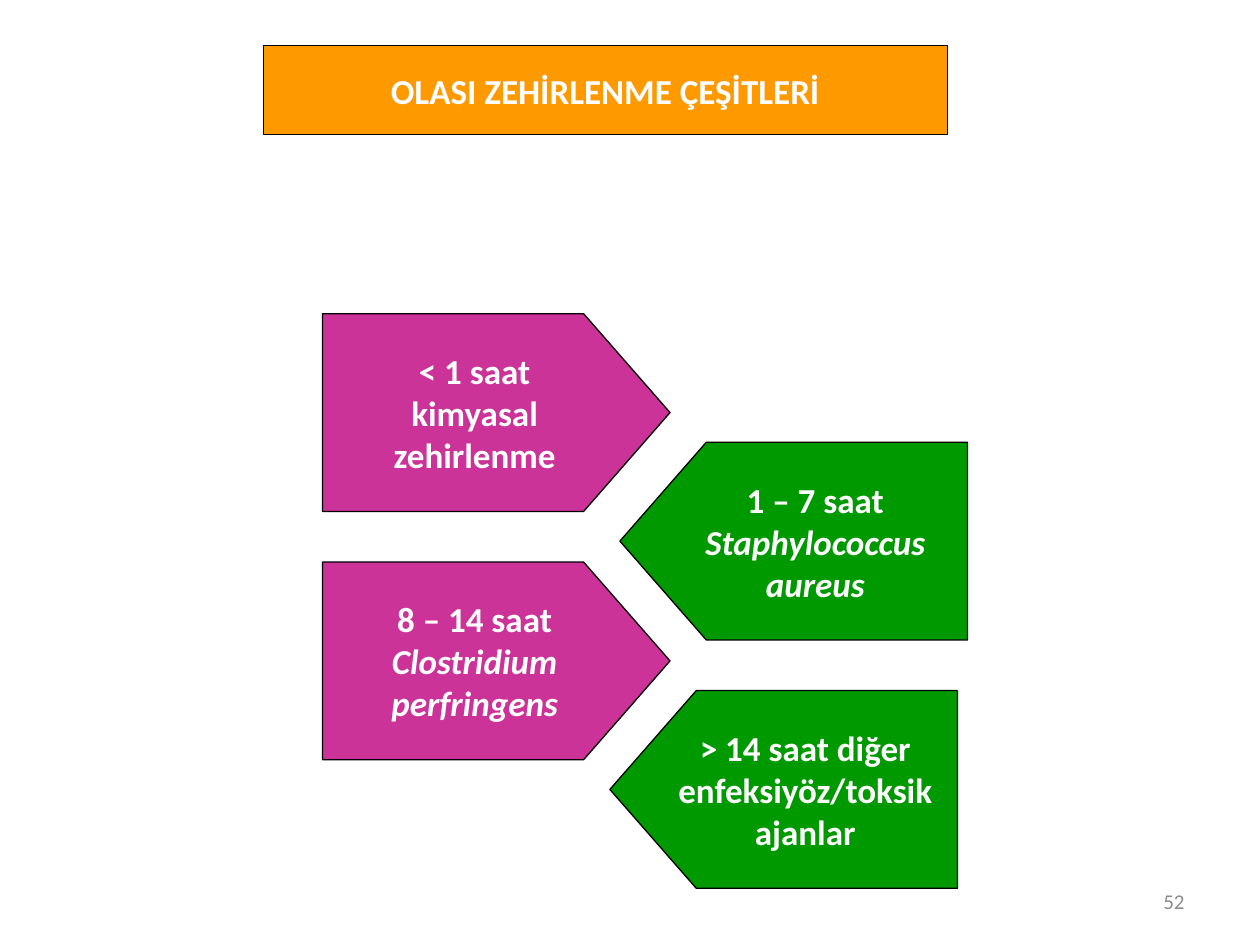
from dataclasses import dataclass

from pptx import Presentation
from pptx.dml.color import RGBColor as Rgb
from pptx.enum import shapes, text
from pptx.util import Pt


@dataclass(frozen=True)
class Theme:
    """Colours and type sizes of the slide."""
    font: str = "Calibri"
    size: int = 20
    small: int = 12
    white: str = "FFFFFF"
    black: str = "000000"
    gray: str = "8C8C8C"
    orange: str = "FF9900"
    pink: str = "CC3399"
    green: str = "009900"


THEME = Theme()
CENTER = text.PP_ALIGN.CENTER
LEFT = [
    [[("< 1 saat", False)], [("kimyasal zehirlenme", False)]],
    [[("8 – 14 saat ", False), ("Clostridium perfringens", True)]],
]
RIGHT = [
    [[("1 – 7 saat ", False), ("Staphylococcus aureus", True)]],
    [[("> 14 saat diğer enfeksiyöz/toksik ajanlar", False)]],
]


def place(shape, box):
    """Move and size a shape to a box in points."""
    shape.left, shape.top, shape.width, shape.height = map(Pt, box)


def paint(shape, color):
    """Fill a shape and give it a thin black outline."""
    shape.fill.solid()
    shape.fill.fore_color.rgb = Rgb.from_string(color)
    shape.line.color.rgb = Rgb.from_string(THEME.black)
    shape.line.width = Pt(0.75)


def write(frame, paras, size, color, bold, align):
    """Write paragraphs of (words, italic) runs into a text frame."""
    frame.vertical_anchor = text.MSO_ANCHOR.MIDDLE
    for i, runs in enumerate(paras):
        para = frame.add_paragraph() if i else frame.paragraphs[0]
        para.alignment = align
        font = para.font
        font.name, font.size, font.bold = THEME.font, Pt(size), bold
        font.color.rgb = Rgb.from_string(color)
        for words, slant in runs:
            run = para.add_run()
            run.text = words
            if slant:
                run.font.italic = True


def head(slide, box):
    """Set the title in its orange bar."""
    title = slide.shapes.title
    place(title, box)
    paint(title, THEME.orange)
    frame = title.text_frame
    frame.auto_size = text.MSO_AUTO_SIZE.NONE
    frame.word_wrap = False
    write(frame, [[("OLASI ZEHİRLENME ÇEŞİTLERİ", False)]],
          THEME.size, THEME.white, True, CENTER)


def arrow(slide, box, paras, color, turned):
    """Add a pentagon arrow, turned to point left if asked."""
    shape = slide.shapes.add_shape(shapes.MSO_SHAPE.PENTAGON, *map(Pt, box))
    shape.adjustments[0] = 0.437
    shape.shadow.inherit = False
    paint(shape, color)
    frame = shape.text_frame
    frame.word_wrap = True
    write(frame, paras, THEME.size, THEME.white, True, CENTER)
    if turned:
        shape.rotation = 180
        shape.element.txBody.bodyPr.set("rot", "10800000")


def arrows(slide, box):
    """Lay two staggered columns of facing arrows in a box."""
    x, y, w, h = box
    wide, high, step = 198.6, 113, 141.9
    drop = h - step - high
    inner = x + w - wide
    for row, paras in enumerate(LEFT):
        spot = (x, y + row * step, wide, high)
        arrow(slide, spot, paras, THEME.pink, False)
    for row, paras in enumerate(RIGHT):
        spot = (inner - row * 5.7, y + drop + row * step, wide, high)
        arrow(slide, spot, paras, THEME.green, True)


def number(slide, box):
    """Add the slide number at the lower right."""
    frame = slide.shapes.add_textbox(*map(Pt, box)).text_frame
    frame.word_wrap = True
    write(frame, [[("52", False)]], THEME.small, THEME.gray, False,
          text.PP_ALIGN.RIGHT)


def main():
    """Build and save the slide."""
    deck = Presentation()
    deck.slide_width, deck.slide_height = Pt(720), Pt(540)
    slide = deck.slides.add_slide(deck.slide_layouts[5])
    head(slide, (150.4, 26, 391, 51))
    arrows(slide, (184.3, 179.3, 368.5, 328.3))
    number(slide, (516, 500.5, 168, 28.8))
    deck.save("out.pptx")


if __name__ == "__main__":
    main()
